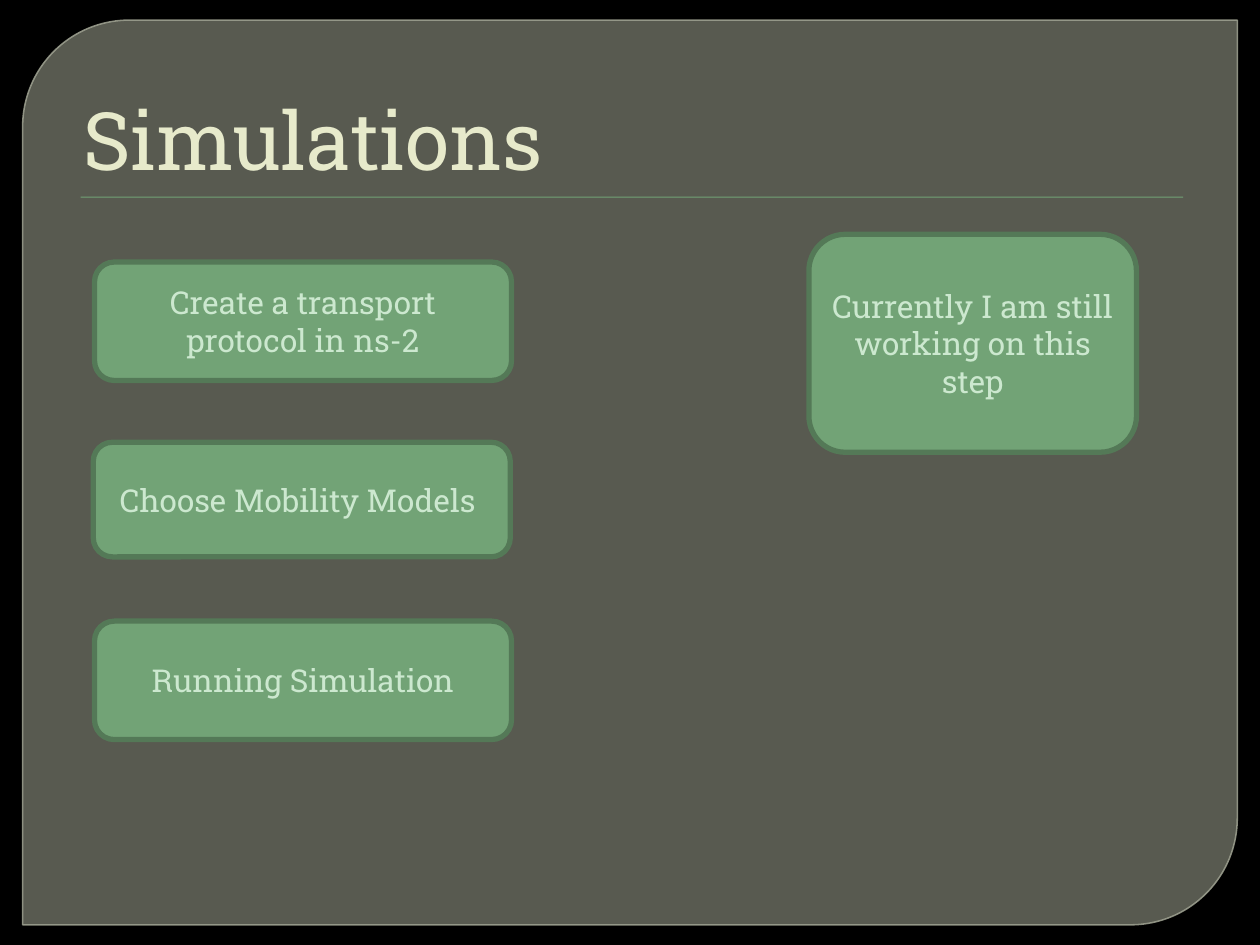
import pptx
import pptx.util
from lxml import etree
from pptx.dml.color import RGBColor
from pptx.enum.shapes import MSO_SHAPE
from pptx.enum.text import MSO_ANCHOR, PP_ALIGN
from pptx.oxml.ns import qn
from pptx.util import Inches

FONT = "Roboto Slab"
COLORS = {
    "back": "000000",
    "panel": "888B7B",
    "rim": "9DA090",
    "title": "E7EACB",
    "green": "72A376",
    "edge": "547957",
    "text": "CCE8CF",
}
STEPS = [
    (0.75, 2.08, 0.94, "Create a transport protocol in ns-2"),
    (0.74, 3.51, 0.91, "Choose Mobility Models "),
    (0.75, 4.93, 0.94, "Running Simulation"),
]


def color(name):
    return RGBColor.from_string(COLORS[name])


def fade(fill, percent):
    """Set the opacity of a solid fill."""
    node = fill._xPr.find(qn("a:solidFill"))[0]
    etree.SubElement(node, qn("a:alpha"), val=str(percent * 1000))


def add_shape(slide, kind, box, fill, line=None, width=0):
    shape = slide.shapes.add_shape(kind, *map(Inches, box))
    shape.shadow.inherit = False
    shape.fill.solid()
    shape.fill.fore_color.rgb = color(fill)
    if line:
        shape.line.color.rgb = color(line)
        shape.line.width = pptx.util.Pt(width)
    else:
        shape.line.fill.background()
    return shape


def write(frame, text, size, name, anchor, align):
    frame.word_wrap = True
    frame.vertical_anchor = anchor
    para = frame.paragraphs[0]
    para.text = text
    para.alignment = align
    para.font.name = FONT
    para.font.size = pptx.util.Pt(size)
    para.font.color.rgb = color(name)


def add_panel(slide):
    panel = add_shape(slide, MSO_SHAPE.ROUND_2_DIAG_RECTANGLE,
                      (0.18, 0.16, 9.64, 7.18), "panel", "rim", 0.87)
    panel.adjustments[0] = 0.118
    panel.adjustments[1] = 0
    fade(panel.fill, 65)
    fade(panel.line.fill, 88)


def add_rule(slide):
    """Draw the thin bar under the title with its soft shadow."""
    rule = add_shape(slide, MSO_SHAPE.RECTANGLE, (0.64, 1.56, 8.75, 0.01), "green")
    effects = rule._element.spPr.find(qn("a:effectLst"))
    shadow = etree.SubElement(effects, qn("a:outerShdw"), blurRad="12700",
                              dist="12700", dir="5400000", rotWithShape="0")
    tone = etree.SubElement(shadow, qn("a:srgbClr"), val=COLORS["back"])
    etree.SubElement(tone, qn("a:alpha"), val="75000")


def add_title(slide, text):
    box = slide.shapes.add_textbox(*map(Inches, (0.5, 0.28, 9, 1.25)))
    box.text_frame.margin_left = Inches(0.16)
    write(box.text_frame, text, 46, "title", MSO_ANCHOR.BOTTOM, PP_ALIGN.LEFT)


def add_card(slide, box, text):
    card = add_shape(slide, MSO_SHAPE.ROUNDED_RECTANGLE, box, "green", "edge", 3)
    write(card.text_frame, text, 18, "text", MSO_ANCHOR.MIDDLE, PP_ALIGN.CENTER)


def main():
    deck = pptx.Presentation()
    deck.slide_width = Inches(10)
    deck.slide_height = Inches(7.5)
    slide = deck.slides.add_slide(deck.slide_layouts[6])
    slide.background.fill.solid()
    slide.background.fill.fore_color.rgb = color("back")

    add_panel(slide)
    add_rule(slide)
    add_title(slide, "Simulations")
    for left, top, height, text in STEPS:
        add_card(slide, (left, top, 3.31, height), text)
    add_card(slide, (6.42, 1.86, 2.6, 1.73),
             "Currently I am still working on this step")
    deck.save("out.pptx")


if __name__ == "__main__":
    main()
